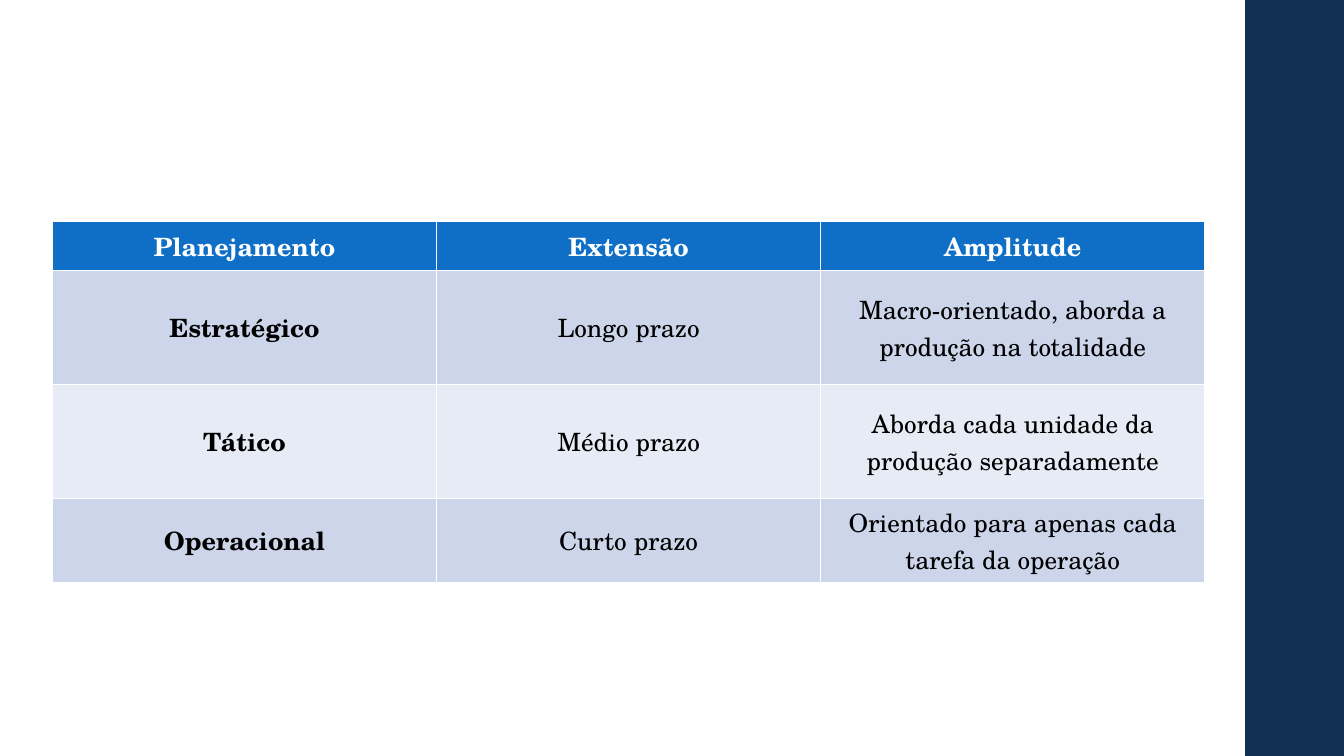
from pptx import Presentation
from pptx.dml.color import RGBColor
from pptx.enum.shapes import MSO_SHAPE
from pptx.enum.text import MSO_ANCHOR, PP_ALIGN
from pptx.util import Inches, Pt

ROWS = [
    ("Planejamento", "Extensão", "Amplitude"),
    ("Estratégico", "Longo prazo", "Macro-orientado, aborda a produção na totalidade"),
    ("Tático", "Médio prazo", "Aborda cada unidade da produção separadamente"),
    ("Operacional", "Curto prazo", "Orientado para apenas cada tarefa da operação"),
]
ROW_HEIGHTS = [0.46, 1.13, 1.13, 0.79]
COLUMN_WIDTH = 3.81
FONT = "TeX Gyre Schola"

WHITE = RGBColor(0xFF, 0xFF, 0xFF)
BLACK = RGBColor(0x00, 0x00, 0x00)
NAVY = RGBColor(0x11, 0x30, 0x52)
HEADER_BLUE = RGBColor(0x0F, 0x6F, 0xC6)
BANDS = [RGBColor(0xE7, 0xEB, 0xF5), RGBColor(0xCC, 0xD5, 0xEA)]


def add_side_band(slide):
    band = slide.shapes.add_shape(
        MSO_SHAPE.RECTANGLE, Inches(12.35), 0, Inches(1), Inches(7.5))
    band.shadow.inherit = False
    band.fill.solid()
    band.fill.fore_color.rgb = NAVY
    band.line.fill.background()


def fill_cell(cell, text, row, column):
    is_header = row == 0
    cell.fill.solid()
    cell.fill.fore_color.rgb = HEADER_BLUE if is_header else BANDS[row % 2]
    cell.vertical_anchor = MSO_ANCHOR.TOP if is_header else MSO_ANCHOR.MIDDLE
    cell.text = text
    paragraph = cell.text_frame.paragraphs[0]
    paragraph.alignment = PP_ALIGN.CENTER
    font = paragraph.font
    font.name = FONT
    font.size = Pt(18)
    font.bold = is_header or column == 0
    font.color.rgb = WHITE if is_header else BLACK


def add_planning_table(slide):
    columns = len(ROWS[0])
    table = slide.shapes.add_table(
        len(ROWS), columns, Inches(0.52), Inches(2.2),
        Inches(columns * COLUMN_WIDTH), Inches(sum(ROW_HEIGHTS))).table
    for column in table.columns:
        column.width = Inches(COLUMN_WIDTH)
    for r, (texts, height) in enumerate(zip(ROWS, ROW_HEIGHTS)):
        table.rows[r].height = Inches(height)
        for c, text in enumerate(texts):
            fill_cell(table.cell(r, c), text, r, c)


def main():
    deck = Presentation()
    deck.slide_width = Inches(13.33)
    deck.slide_height = Inches(7.5)
    slide = deck.slides.add_slide(deck.slide_layouts[6])
    add_side_band(slide)
    add_planning_table(slide)
    deck.save("out.pptx")


if __name__ == "__main__":
    main()
